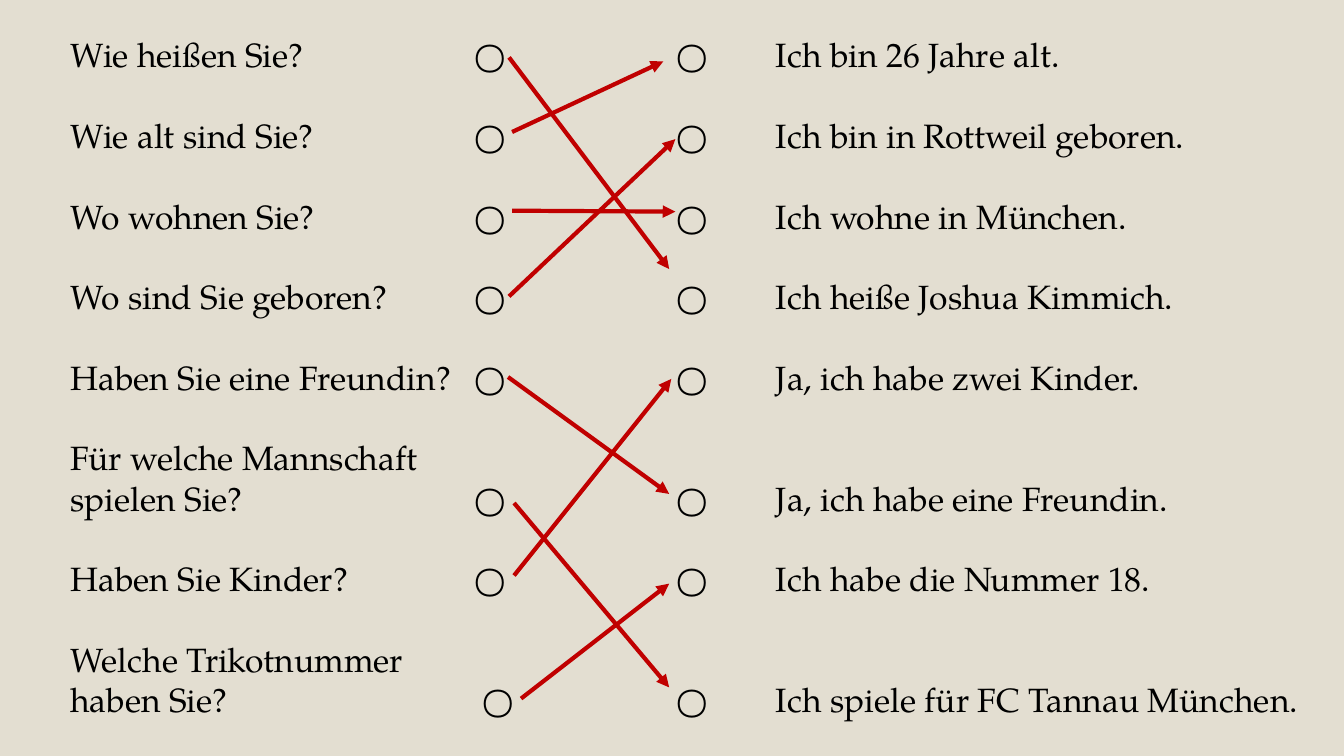
from pptx import Presentation
from pptx.dml.color import RGBColor
from pptx.enum.shapes import MSO_CONNECTOR
from pptx.oxml.ns import qn
from pptx.util import Pt
from lxml import etree

STRAIGHT = MSO_CONNECTOR.STRAIGHT
BEIGE = RGBColor(0xE3, 0xDE, 0xD1)
BLACK = RGBColor(0, 0, 0)
RED = RGBColor(0xC0, 0, 0)

# Content: question, mark beside it, answer
CIRCLE = "◯"
ROWS = [
    ("Wie heißen Sie?", CIRCLE, "Ich bin 26 Jahre alt."),
    ("Wie alt sind Sie?", CIRCLE, "Ich bin in Rottweil geboren."),
    ("Wo wohnen Sie?", CIRCLE, "Ich wohne in München."),
    ("Wo sind Sie geboren?", CIRCLE, "Ich heiße Joshua Kimmich."),
    ("Haben Sie eine Freundin?", CIRCLE, "Ja, ich habe zwei Kinder."),
    ("Für welche Mannschaft\vspielen Sie?", CIRCLE, "Ja, ich habe eine Freundin."),
    ("Haben Sie Kinder?", CIRCLE, "Ich habe die Nummer 18."),
    ("Welche Trikotnummer\vhaben Sie?", " " + CIRCLE, "Ich spiele für FC Tannau München."),
]

# Arrows from question to answer: start x, start y, end x, end y
ARROWS = [
    (363.6, 41, 478, 192.2),
    (365.8, 94.3, 473.8, 43.9),
    (365.8, 150.5, 482.4, 151.2),
    (363.6, 211.7, 482.4, 99.4),
    (362.9, 269.3, 478, 352.8),
    (367.2, 359.3, 478, 491),
    (367.2, 411.1, 479.5, 270.7),
    (372.2, 499, 478, 416.9),
]

# Layout
TAB_STOPS = (288, 432, 504)
ROW_GAP = 28.8
FONT_FORMAT = {"name": "TeX Gyre Pagella", "size": Pt(24)}


def add_tab_stops(paragraph):
    properties = paragraph._p.get_or_add_pPr()
    tab_list = etree.SubElement(properties, qn("a:tabLst"))
    for position in TAB_STOPS:
        etree.SubElement(tab_list, qn("a:tab"), pos=str(Pt(position)), algn="l")


def add_rows(slide):
    text_frame = slide.shapes.add_textbox(Pt(43.2), Pt(20.9), Pt(901.4), Pt(510)).text_frame
    text_frame.word_wrap = True
    for index, (question, mark, answer) in enumerate(ROWS):
        paragraph = text_frame.add_paragraph() if index else text_frame.paragraphs[0]
        paragraph.text = "\t".join((question, mark, CIRCLE, answer))
        paragraph.space_before = Pt(ROW_GAP if index else 0)
        add_tab_stops(paragraph)
        for run in paragraph.runs:
            for name, value in FONT_FORMAT.items():
                setattr(run.font, name, value)
            run.font.color.rgb = BLACK


def add_arrow(slide, ends):
    arrow = slide.shapes.add_connector(STRAIGHT, *map(Pt, ends))
    arrow.line.color.rgb = RED
    arrow.line.width = Pt(3)
    etree.SubElement(arrow.line._get_or_add_ln(), qn("a:tailEnd"), type="triangle")
    etree.SubElement(arrow._element.spPr, qn("a:effectLst"))


def main():
    presentation = Presentation()
    presentation.slide_width = Pt(960)
    presentation.slide_height = Pt(540)
    slide = presentation.slides.add_slide(presentation.slide_layouts[6])
    slide.background.fill.solid()
    slide.background.fill.fore_color.rgb = BEIGE

    add_rows(slide)
    for ends in ARROWS:
        add_arrow(slide, ends)
    presentation.save("out.pptx")


if __name__ == "__main__":
    main()
